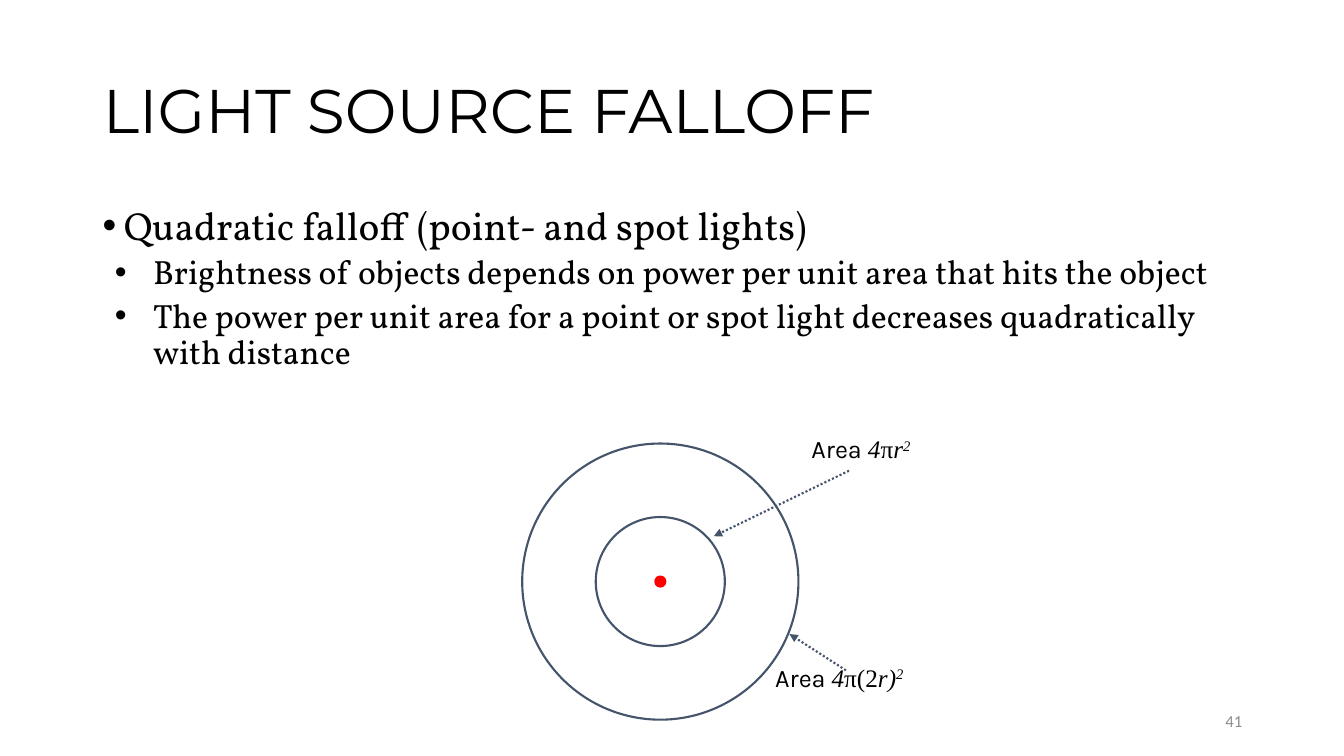
"""Build the slide on quadratic light source falloff."""
from pptx import Presentation
from pptx.dml.color import RGBColor
from pptx.enum.dml import MSO_LINE
from pptx.enum.shapes import MSO_CONNECTOR as Connector, MSO_SHAPE as Shape
from pptx.enum.text import MSO_ANCHOR as Anchor, MSO_AUTO_SIZE as AutoSize, PP_ALIGN as Align
from pptx.oxml.ns import qn
from pptx.util import Inches, Pt
from lxml.etree import SubElement

WIDTH, HEIGHT = Inches(13.33), Inches(7.5)
BLACK, SLATE, RED, GREY = "000000", "44546A", "FF0000", "8C8C8C"
MATH = {"font": "Times New Roman"}
ITALIC = {**MATH, "italic": True}
SQUARED = {**ITALIC, "raised": 30}

# Boxes and points are percentages of the slide's width and height.
TITLE = "LIGHT SOURCE FALLOFF"
TITLE_BOX = (6.9, 5.33, 86.25, 19.33)
BODY_BOX = (6.9, 26.67, 86.25, 63.47)
TOP_POINT = {"size": 28, "margin": 0.21, "hang": 0.21}
SUB_POINT = {"size": 24, "margin": 0.5, "hang": 0.38, "before": 5}
POINTS = [
    ("Quadratic falloff (point- and spot lights)", TOP_POINT),
    ("Brightness of objects depends on power per unit area that hits the object", SUB_POINT),
    ("The power per unit area for a point or spot light decreases quadratically with distance",
     SUB_POINT),
]
CENTRE = (49.13, 76.93)
SPHERES = [(1.33, RED, RED), (17.07, None, SLATE), (36.53, None, SLATE)]
AREAS = [
    ((59.64, 56.67, 9.3, 5.33), [("4", ITALIC), ("π", MATH), ("r", ITALIC), ("2", SQUARED)]),
    ((56.94, 86.93, 11.48, 5.33), [("4", ITALIC), ("π(2", MATH), ("r)", ITALIC), ("2", SQUARED)]),
]
ARROWS = [((63.17, 62.27), (53.11, 70.93)), ((62.94, 88.67), (58.74, 83.87))]
NUMBER, NUMBER_BOX = "41", (70.67, 92.67, 22.5, 5.33)


def colour(code):
    """Turn a hex string into a colour."""
    return RGBColor.from_string(code)


def place(*shares):
    """Turn alternating width and height percentages into lengths."""
    return [round(share * (WIDTH, HEIGHT)[i % 2] / 100) for i, share in enumerate(shares)]


def write(paragraph, text, font="Karla", size=18, ink=BLACK, italic=False, raised=0):
    """Add a formatted run to a paragraph."""
    run = paragraph.add_run()
    run.text = text
    run.font.name, run.font.size, run.font.italic = font, Pt(size), italic
    run.font.color.rgb = colour(ink)
    if raised:
        run._r.get_or_add_rPr().set("baseline", str(raised * 1000))


def add_bullet(paragraph, margin, hang):
    """Give a paragraph a bullet with a hanging indent in inches."""
    properties = paragraph._p.get_or_add_pPr()
    properties.set("marL", str(Inches(margin)))
    properties.set("indent", str(-Inches(hang)))
    SubElement(properties, qn("a:buFont")).set("typeface", "Arial")
    SubElement(properties, qn("a:buChar")).set("char", "•")


def add_title(slide):
    """Move and fill the title placeholder."""
    title = slide.shapes.title
    title.left, title.top, title.width, title.height = place(*TITLE_BOX)
    title.text_frame.auto_size = AutoSize.NONE
    title.text_frame.vertical_anchor = Anchor.MIDDLE
    heading = title.text_frame.paragraphs[0]
    heading.alignment, heading.line_spacing = Align.LEFT, 0.9
    write(heading, TITLE, font="Montserrat", size=44)


def add_points(slide):
    """Add the bulleted statements."""
    frame = slide.shapes.add_textbox(*place(*BODY_BOX)).text_frame
    frame.word_wrap = True
    for i, (statement, style) in enumerate(POINTS):
        point = frame.add_paragraph() if i else frame.paragraphs[0]
        add_bullet(point, style["margin"], style["hang"])
        point.line_spacing = 0.9
        if "before" in style:
            point.level, point.space_before = 1, Pt(style["before"])
        write(point, statement, font="Vollkorn", size=style["size"])


def add_sphere(slide, share, fill, edge):
    """Add a circle about the light, its diameter a share of the slide's height."""
    x, y, _, diameter = place(*CENTRE, 0, share)
    sphere = slide.shapes.add_shape(
        Shape.OVAL, x - diameter // 2, y - diameter // 2, diameter, diameter)
    sphere.shadow.inherit = False
    if fill:
        sphere.fill.solid()
        sphere.fill.fore_color.rgb = colour(fill)
    else:
        sphere.fill.background()
    sphere.line.color.rgb, sphere.line.width = colour(edge), Pt(1.5)


def add_area(slide, box, formula):
    """Add a label that gives a sphere's area."""
    frame = slide.shapes.add_textbox(*place(*box)).text_frame
    frame.word_wrap, frame.auto_size = False, AutoSize.SHAPE_TO_FIT_TEXT
    write(frame.paragraphs[0], "Area ")
    for term, style in formula:
        write(frame.paragraphs[0], term, **style)


def add_arrow(slide, start, end):
    """Add a dotted arrow from a label to its sphere."""
    arrow = slide.shapes.add_connector(Connector.STRAIGHT, *place(*start, *end))
    arrow.line.color.rgb, arrow.line.width = colour(SLATE), Pt(1.5)
    arrow.line.dash_style = MSO_LINE.ROUND_DOT
    SubElement(arrow.line._get_or_add_ln(), qn("a:tailEnd")).set("type", "triangle")
    SubElement(arrow._element.spPr, qn("a:effectLst"))


def add_number(slide):
    """Add the slide number."""
    frame = slide.shapes.add_textbox(*place(*NUMBER_BOX)).text_frame
    frame.word_wrap, frame.vertical_anchor = True, Anchor.MIDDLE
    frame.paragraphs[0].alignment = Align.RIGHT
    write(frame.paragraphs[0], NUMBER, font="Calibri", size=12, ink=GREY)


def main():
    """Build and save the presentation."""
    deck = Presentation()
    deck.slide_width, deck.slide_height = WIDTH, HEIGHT
    slide = deck.slides.add_slide(deck.slide_layouts[5])
    add_points(slide)
    add_title(slide)
    for sphere in SPHERES:
        add_sphere(slide, *sphere)
    for area in AREAS:
        add_area(slide, *area)
    for arrow in ARROWS:
        add_arrow(slide, *arrow)
    add_number(slide)
    deck.save("out.pptx")


if __name__ == "__main__":
    main()
